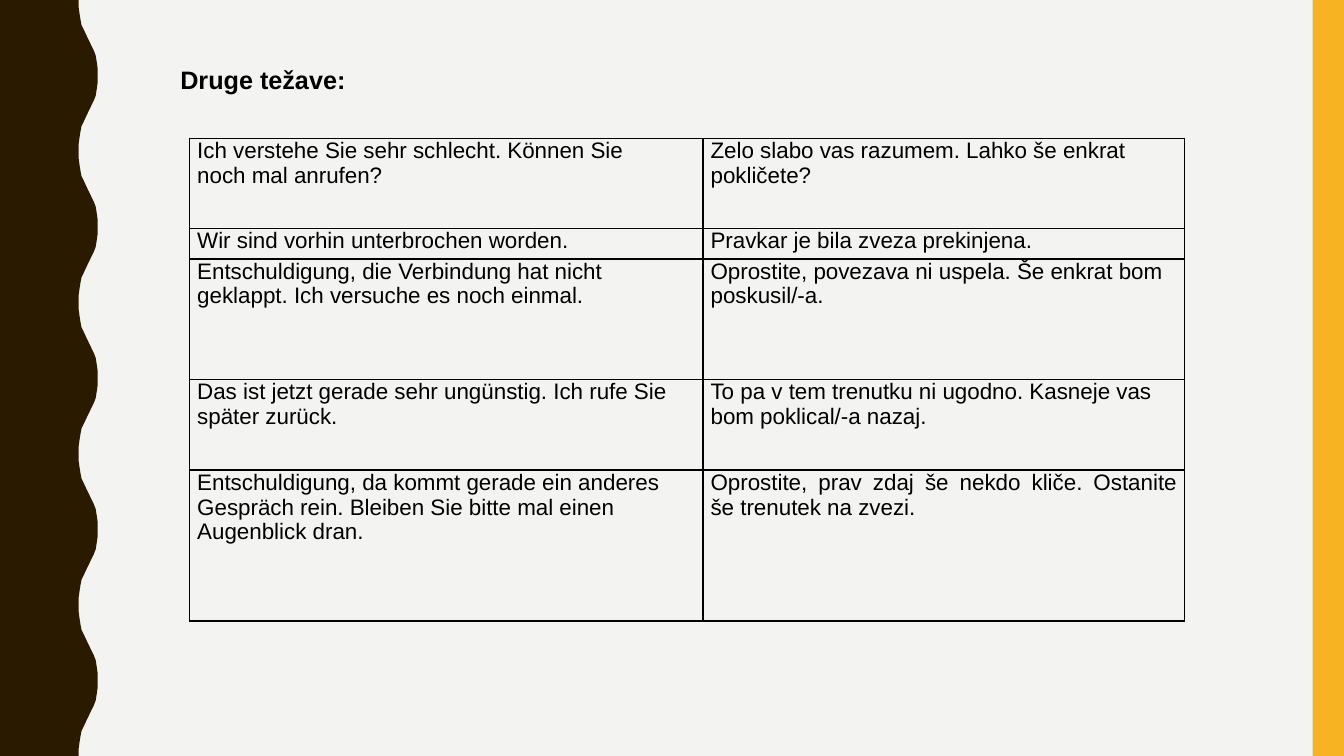
from dataclasses import dataclass

from lxml.etree import SubElement
from pptx import Presentation
from pptx.dml.color import RGBColor
from pptx.enum.shapes import MSO_SHAPE as Shape
from pptx.enum.text import MSO_ANCHOR as Anchor, MSO_AUTO_SIZE as AutoSize, PP_ALIGN as Align
from pptx.oxml.ns import qn
from pptx.util import Pt


@dataclass(frozen=True)
class Theme:
    background: str = "F3F3F2"
    wave: str = "2A1A00"
    stripe: str = "F8B323"
    ink: str = "000000"
    font: str = "Arial"
    heading_size: float = 18
    phrase_size: float = 16
    border_width: float = 1


THEME = Theme()
SLIDE_WIDTH, SLIDE_HEIGHT = 960, 540
HALF_WAVES = 10
HALF_WAVE = [
    (56.2, 0), (56.2, 5), (56.9, 10), (57.6, 14.4), (58.3, 18),
    (59.8, 21), (61.2, 24), (62.6, 27), (64.1, 30), (65.5, 33),
    (67, 36), (68.4, 39.6), (69.1, 44), (69.8, 49), (69.8, 54),
]
COLUMN_WIDTHS = [366.7, 344]
ROW_UNIT = 21.55
# Each row: height in row units, German phrase, Slovenian phrase
PHRASES = [
    (3, "Ich verstehe Sie sehr schlecht. Können Sie\nnoch mal anrufen?",
     "Zelo slabo vas razumem. Lahko še enkrat\npokličete?"),
    (1, "Wir sind vorhin unterbrochen worden.",
     "Pravkar je bila zveza prekinjena."),
    (4, "Entschuldigung, die Verbindung hat nicht\ngeklappt. Ich versuche es noch einmal.",
     "Oprostite, povezava ni uspela. Še enkrat bom\nposkusil/-a."),
    (3, "Das ist jetzt gerade sehr ungünstig. Ich rufe Sie\nspäter zurück.",
     "To pa v tem trenutku ni ugodno. Kasneje vas\nbom poklical/-a nazaj."),
    (5, "Entschuldigung, da kommt gerade ein anderes\n"
        "Gespräch rein. Bleiben Sie bitte mal einen\nAugenblick dran.",
     "Oprostite, prav zdaj še nekdo kliče. Ostanite še trenutek na zvezi."),
]


def color(code):
    return RGBColor.from_string(code)


def paint(shape, code):
    shape.shadow.inherit = False
    shape.fill.solid()
    shape.fill.fore_color.rgb = color(code)
    shape.line.fill.background()


def write(frame, text, size, bold=False):
    """Set justified text, one paragraph per line."""
    frame.text = text
    for paragraph in frame.paragraphs:
        paragraph.alignment = Align.JUSTIFY
        for run in paragraph.runs:
            run.font.name = THEME.font
            run.font.size = Pt(size)
            run.font.bold = bold
            run.font.color.rgb = color(THEME.ink)


def add_wave(slide):
    """Draw the left band, its edge built from alternately mirrored half waves."""
    step = SLIDE_HEIGHT / HALF_WAVES
    edge = []
    for index in range(HALF_WAVES):
        half = HALF_WAVE if index % 2 == 0 else [(x, step - y) for x, y in reversed(HALF_WAVE)]
        edge += [(Pt(x), Pt(index * step + y)) for x, y in half]
    builder = slide.shapes.build_freeform(0, 0)
    builder.add_line_segments(edge + [(0, Pt(SLIDE_HEIGHT))], close=True)
    paint(builder.convert_to_shape(), THEME.wave)


def add_stripe(slide):
    left = 937.6
    stripe = slide.shapes.add_shape(
        Shape.RECTANGLE, Pt(left), 0, Pt(SLIDE_WIDTH - left), Pt(SLIDE_HEIGHT))
    paint(stripe, THEME.stripe)


def add_heading(slide, text):
    frame = slide.shapes.add_textbox(Pt(121.7), Pt(42.5), Pt(134), Pt(29)).text_frame
    frame.word_wrap = False
    frame.auto_size = AutoSize.SHAPE_TO_FIT_TEXT
    frame.vertical_anchor = Anchor.MIDDLE
    write(frame, text, THEME.heading_size, bold=True)


def add_borders(cell):
    properties = cell._tc.get_or_add_tcPr()
    for side in ("a:lnL", "a:lnR", "a:lnT", "a:lnB"):
        line = SubElement(properties, qn(side), w=str(Pt(THEME.border_width)))
        fill = SubElement(line, qn("a:solidFill"))
        SubElement(fill, qn("a:srgbClr"), val=THEME.ink)


def fill_cell(cell, phrase):
    cell.margin_left = cell.margin_right = Pt(5.4)
    cell.margin_top = cell.margin_bottom = 0
    add_borders(cell)
    cell.fill.background()
    write(cell.text_frame, phrase, THEME.phrase_size)


def add_phrase_table(slide):
    height = ROW_UNIT * sum(units for units, *_ in PHRASES)
    table = slide.shapes.add_table(
        len(PHRASES), len(COLUMN_WIDTHS), Pt(135.5), Pt(98.8),
        Pt(sum(COLUMN_WIDTHS)), Pt(height)).table
    table.first_row = table.horz_banding = False
    for column, width in zip(table.columns, COLUMN_WIDTHS):
        column.width = Pt(width)
    for row, (units, *phrases) in zip(table.rows, PHRASES):
        row.height = Pt(units * ROW_UNIT)
        for cell, phrase in zip(row.cells, phrases):
            fill_cell(cell, phrase)


def main():
    deck = Presentation()
    deck.slide_width, deck.slide_height = Pt(SLIDE_WIDTH), Pt(SLIDE_HEIGHT)
    slide = deck.slides.add_slide(deck.slide_layouts[6])
    slide.background.fill.solid()
    slide.background.fill.fore_color.rgb = color(THEME.background)
    add_wave(slide)
    add_stripe(slide)
    add_phrase_table(slide)
    add_heading(slide, "Druge težave:")
    deck.save("out.pptx")


if __name__ == "__main__":
    main()
